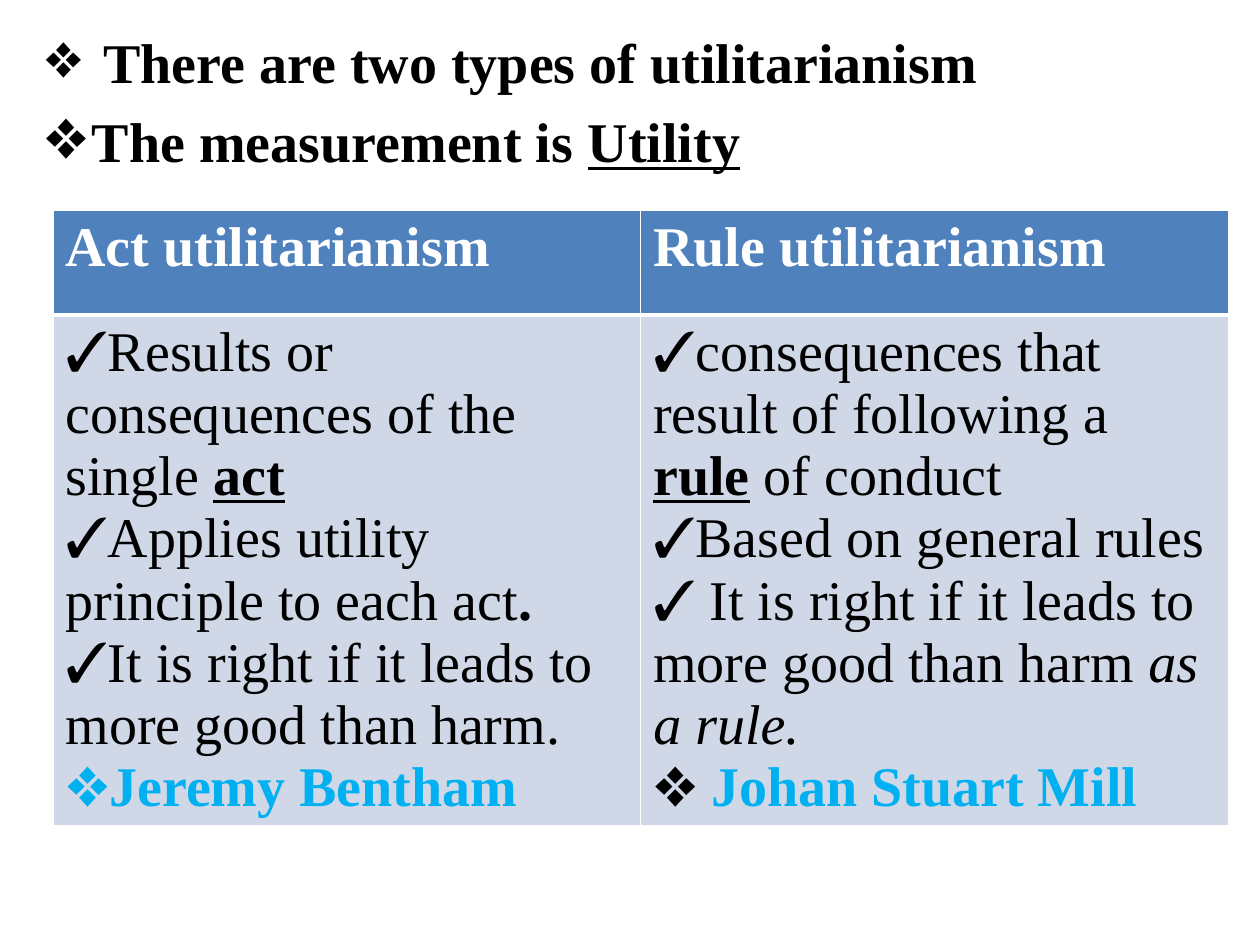
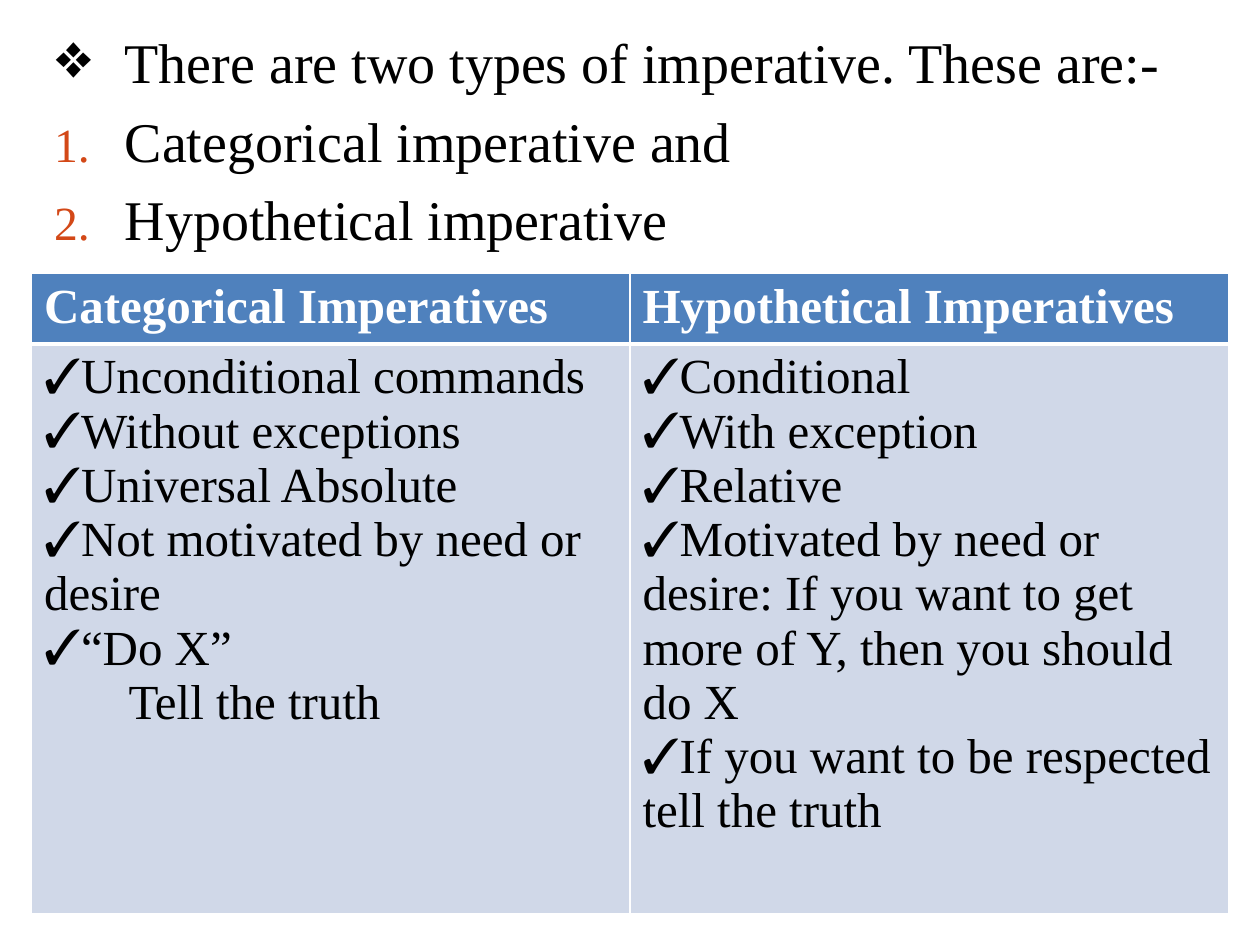
from dataclasses import dataclass

import lxml.etree
import pptx
import pptx.dml.color
import pptx.enum.text
import pptx.oxml.ns
import pptx.slide
import pptx.table
import pptx.text.text
import pptx.util

Inches = pptx.util.Inches
RGBColor = pptx.dml.color.RGBColor
qn = pptx.oxml.ns.qn

WHITE = RGBColor(0xFF, 0xFF, 0xFF)
BLACK = RGBColor(0x00, 0x00, 0x00)
BLUE = RGBColor(0x4F, 0x81, 0xBD)
PALE = RGBColor(0xD0, 0xD8, 0xE8)
SKY = RGBColor(0x00, 0xB0, 0xF0)
RUST = RGBColor(0xD3, 0x48, 0x17)
FONT = "Times New Roman"
LEAD_SIZE = 32
THIN, THICK = 1, 3


@dataclass(frozen=True)
class Run:
    text: str
    bold: bool = False
    line: bool = False
    slant: bool = False
    color: RGBColor = BLACK


@dataclass(frozen=True)
class Mark:
    """A bullet sign, or automatic numbers where the sign is empty."""
    sign: str = ""
    scale: int = 100
    color: RGBColor | None = None


@dataclass(frozen=True)
class Para:
    runs: tuple[Run, ...]
    mark: Mark | None = None
    left: float = 0
    hang: float = 0


@dataclass(frozen=True)
class Grid:
    left: float
    top: float
    width: float
    rows: tuple[float, float]
    size: int
    heads: tuple[str, str]
    lists: tuple[list[Para], list[Para]]


@dataclass(frozen=True)
class Page:
    left: float
    width: float
    lead: list[Para]
    grid: Grid


GEM = Mark("❖")
SMALL_GEM = Mark("❖", 88)
TICK = Mark("✓")
COUNT = Mark(scale=85, color=RUST)


def tick(*runs: Run) -> Para:
    return Para(runs, TICK)


def ticks(*lines: str) -> list[Para]:
    return [tick(Run(line)) for line in lines]


def hung(mark: Mark, depth: float, *runs: Run) -> Para:
    return Para(runs, mark, depth, depth)


PAGES = [
    Page(
        0.25, 9.58,
        [
            hung(SMALL_GEM, 0.47, Run("There are two types of utilitarianism", bold=True)),
            hung(GEM, 0.38, Run("The measurement is ", bold=True),
                 Run("Utility", bold=True, line=True)),
        ],
        Grid(
            0.42, 1.67, 9.33, (0.83, 3.98), 32,
            ("Act utilitarianism", "Rule utilitarianism"),
            (
                [
                    tick(Run("Results or consequences of the single "),
                         Run("act", bold=True, line=True)),
                    tick(Run("Applies utility principle to each act"), Run(".", bold=True)),
                    tick(Run("It is right if it leads to more good than harm.")),
                    Para((Run("Jeremy Bentham", bold=True, color=SKY),), GEM),
                ],
                [
                    tick(Run("consequences that result of following a "),
                         Run("rule", bold=True, line=True), Run(" of conduct")),
                    tick(Run("Based on general rules")),
                    tick(Run(" It is right if it leads to more good than harm "),
                         Run("as a rule.", slant=True)),
                    Para((Run(" "), Run("Johan Stuart Mill", bold=True, color=SKY)), GEM),
                ],
            ),
        ),
    ),
    Page(
        0.33, 9.5,
        [
            hung(SMALL_GEM, 0.56, Run("There are two types of imperative. These are:-")),
            hung(COUNT, 0.56, Run("Categorical imperative and")),
            hung(COUNT, 0.56, Run("Hypothetical imperative")),
        ],
        Grid(
            0.25, 2.17, 9.5, (0.56, 4.52), 28,
            ("Categorical Imperatives", "Hypothetical Imperatives"),
            (
                ticks(
                    "Unconditional commands",
                    "Without exceptions",
                    "Universal Absolute",
                    "Not motivated by need or desire",
                    "“Do X”",
                ) + [Para((Run("Tell the truth"),), left=0.67)],
                ticks(
                    "Conditional",
                    "With exception",
                    "Relative",
                    "Motivated by need or desire: If you want to get more of Y, "
                    "then you should do X",
                    "If you want to be respected tell the truth",
                ),
            ),
        ),
    ),
]


def set_mark(para: pptx.text.text._Paragraph, item: Para) -> None:
    """Set the indents and the bullet of a paragraph."""
    props = para._p.get_or_add_pPr()
    props.set("marL", str(Inches(item.left)))
    props.set("indent", str(-Inches(item.hang)))

    def add(tag: str, **attrs: str) -> lxml.etree._Element:
        return lxml.etree.SubElement(props, qn(tag), attrs)

    mark = item.mark
    if mark is None:
        add("a:buNone")
        return
    if mark.color is not None:
        lxml.etree.SubElement(add("a:buClr"), qn("a:srgbClr"), val=str(mark.color))
    add("a:buSzPct", val=str(mark.scale * 1000))
    add("a:buFont", typeface=FONT)
    if mark.sign:
        add("a:buChar", char=mark.sign)
    else:
        add("a:buAutoNum", type="arabicPeriod")


def write(frame: pptx.text.text.TextFrame, items: list[Para], size: int) -> None:
    for pos, item in enumerate(items):
        para = frame.add_paragraph() if pos else frame.paragraphs[0]
        set_mark(para, item)
        for part in item.runs:
            run = para.add_run()
            run.text = part.text
            font = run.font
            font.name = FONT
            font.size = pptx.util.Pt(size)
            font.bold = part.bold
            font.italic = part.slant
            font.underline = part.line
            font.color.rgb = part.color


def style(cell: pptx.table._Cell, fill: RGBColor, top: int, base: int) -> None:
    """Give a cell its white edges and its fill."""
    props = cell._tc.get_or_add_tcPr()
    for side, width in (("L", THIN), ("R", THIN), ("T", top), ("B", base)):
        edge = lxml.etree.SubElement(props, qn(f"a:ln{side}"), w=str(pptx.util.Pt(width)))
        paint = lxml.etree.SubElement(edge, qn("a:solidFill"))
        lxml.etree.SubElement(paint, qn("a:srgbClr"), val=str(WHITE))
    cell.fill.solid()
    cell.fill.fore_color.rgb = fill


def add_grid(slide: pptx.slide.Slide, grid: Grid) -> None:
    count = len(grid.heads)
    table = slide.shapes.add_table(
        len(grid.rows), count, Inches(grid.left), Inches(grid.top),
        Inches(grid.width), Inches(sum(grid.rows))).table
    for row, height in zip(table.rows, grid.rows):
        row.height = Inches(height)
    for col, (head, items) in enumerate(zip(grid.heads, grid.lists)):
        table.columns[col].width = Inches(grid.width / count)
        title, body = table.cell(0, col), table.cell(1, col)
        style(title, BLUE, THIN, THICK)
        style(body, PALE, THICK, THIN)
        write(title.text_frame, [Para((Run(head, bold=True, color=WHITE),))], grid.size)
        write(body.text_frame, items, grid.size)


def add_page(deck: pptx.presentation.Presentation, page: Page) -> None:
    slide = deck.slides.add_slide(deck.slide_layouts.get_by_name("Title and Content"))
    title = slide.shapes.title.element
    title.getparent().remove(title)
    body = slide.placeholders[1]
    body.left, body.top = Inches(page.left), Inches(0.17)
    body.width, body.height = Inches(page.width), Inches(7.17)
    body.text_frame.word_wrap = True
    body.text_frame.auto_size = pptx.enum.text.MSO_AUTO_SIZE.NONE
    write(body.text_frame, page.lead, LEAD_SIZE)
    add_grid(slide, page.grid)


def main() -> None:
    deck = pptx.Presentation()
    deck.slide_width, deck.slide_height = Inches(10), Inches(7.5)
    for page in PAGES:
        add_page(deck, page)
    deck.save("out.pptx")


if __name__ == "__main__":
    main()
